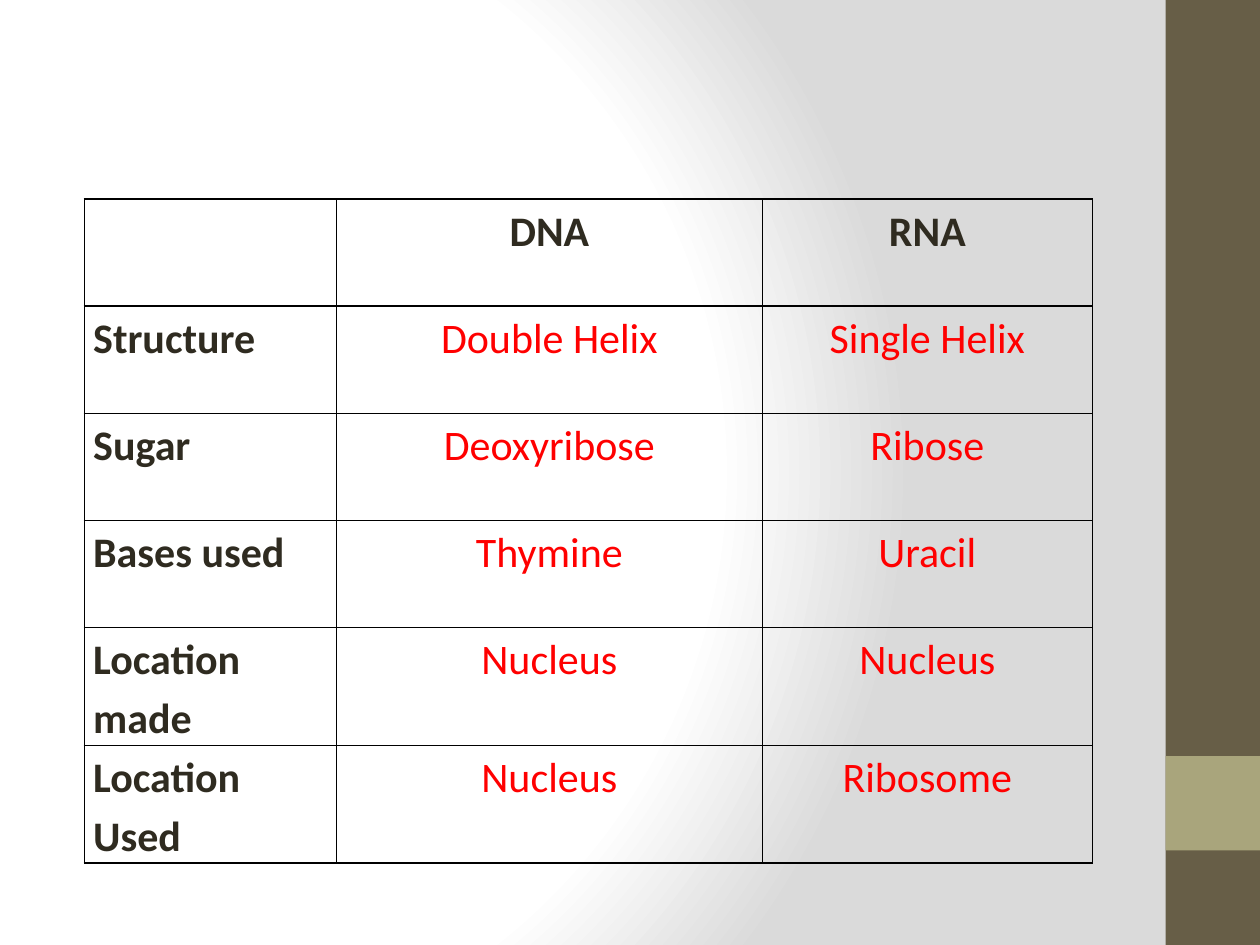
from dataclasses import dataclass

from pptx import Presentation
from pptx.dml.color import RGBColor
from pptx.enum.shapes import MSO_SHAPE
from pptx.enum.text import PP_ALIGN
from pptx.oxml import parse_xml
from pptx.oxml.ns import nsdecls
from pptx.util import Inches, Pt

RECTANGLE = MSO_SHAPE.RECTANGLE
LEFT, CENTER = PP_ALIGN.LEFT, PP_ALIGN.CENTER
DARK, RED, BLACK = "2F2B20", "FF0000", "000000"
BACKGROUND_STOPS = ((0, "FFFFFF"), (75, "FFFFFF"), (100, "DADADA"))
COLUMN_WIDTHS = (2, 3.38, 2.62)
ROW_HEIGHT = 0.85
ROWS = (
    ("", "DNA", "RNA"),
    ("Structure", "Double Helix", "Single Helix"),
    ("Sugar", "Deoxyribose", "Ribose"),
    ("Bases used", "Thymine", "Uracil"),
    ("Location made", "Nucleus", "Nucleus"),
    ("Location Used", "Nucleus", "Ribosome"),
)


@dataclass
class Band:
    top: float
    height: float
    color: str


BANDS = (Band(0, 7.5, "675E47"), Band(6, 0.75, "A9A57C"))


def rgb(color: str) -> RGBColor:
    return RGBColor.from_string(color)


def paint_background(page) -> None:
    stops = "".join(
        f'<a:gs pos="{position * 1000}"><a:srgbClr val="{color}"/></a:gs>'
        for position, color in BACKGROUND_STOPS
    )
    page.element.cSld.insert(0, parse_xml(
        f'<p:bg {nsdecls("p", "a")}><p:bgPr><a:gradFill rotWithShape="1">'
        f'<a:gsLst>{stops}</a:gsLst><a:path path="circle">'
        '<a:fillToRect l="20000" t="50000" r="100000" b="50000"/></a:path>'
        '</a:gradFill><a:effectLst/></p:bgPr></p:bg>'
    ))


def draw_band(page, band: Band) -> None:
    box = page.shapes.add_shape(
        RECTANGLE, Inches(9.25), Inches(band.top), Inches(0.75), Inches(band.height)
    )
    box.shadow.inherit = False
    box.fill.solid()
    box.fill.fore_color.rgb = rgb(band.color)
    box.line.fill.background()


def draw_borders(cell) -> None:
    properties = cell._tc.get_or_add_tcPr()
    for side in ("lnL", "lnR", "lnT", "lnB"):
        properties.append(parse_xml(
            f'<a:{side} {nsdecls("a")} w="{Pt(1)}"><a:solidFill>'
            f'<a:srgbClr val="{BLACK}"/></a:solidFill></a:{side}>'
        ))


def fill_cell(cell, text: str, is_heading: bool, alignment: PP_ALIGN) -> None:
    draw_borders(cell)
    cell.fill.background()
    cell.margin_left = cell.margin_right = Inches(0.07)
    cell.margin_top = cell.margin_bottom = 0
    para = cell.text_frame.paragraphs[0]
    para.text = text
    para.alignment = alignment
    para.line_spacing = 1.15
    para.font.size = Pt(24)
    for span in para.runs:
        span.font.name = "Calibri"
        span.font.size = Pt(24)
        span.font.bold = is_heading
        span.font.color.rgb = rgb(DARK if is_heading else RED)


def draw_comparison(page) -> None:
    table = page.shapes.add_table(
        len(ROWS), len(COLUMN_WIDTHS), Inches(0.67), Inches(1.58),
        Inches(sum(COLUMN_WIDTHS)), Inches(ROW_HEIGHT * len(ROWS)),
    ).table
    table.first_row = table.horz_banding = False
    for column, width in zip(table.columns, COLUMN_WIDTHS):
        column.width = Inches(width)
    for row_index, texts in enumerate(ROWS):
        table.rows[row_index].height = Inches(ROW_HEIGHT)
        for column_index, text in enumerate(texts):
            is_heading = row_index == 0 or column_index == 0
            alignment = CENTER if column_index else LEFT
            fill_cell(table.cell(row_index, column_index), text, is_heading, alignment)


def main() -> None:
    deck = Presentation()
    deck.slide_width, deck.slide_height = Inches(10), Inches(7.5)
    page = deck.slides.add_slide(deck.slide_layouts[6])
    paint_background(page)
    for band in BANDS:
        draw_band(page, band)
    draw_comparison(page)
    deck.save("out.pptx")


if __name__ == "__main__":
    main()
